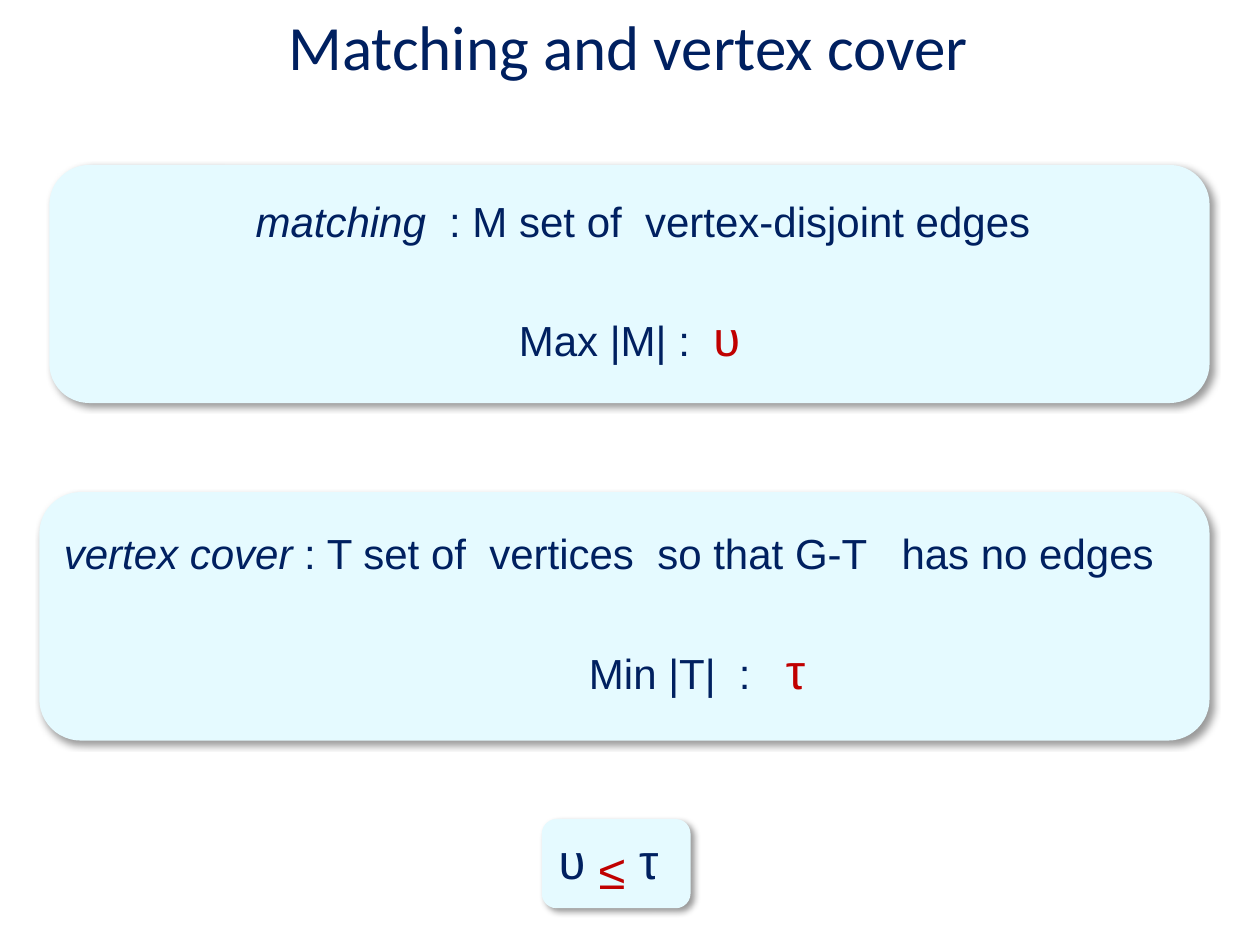
from lxml.etree import SubElement
from pptx import Presentation
from pptx.dml.color import RGBColor
from pptx.enum.shapes import MSO_SHAPE as Shape
from pptx.enum.text import MSO_ANCHOR as Anchor, PP_ALIGN as Align
from pptx.oxml.ns import qn
from pptx.util import Pt

NAVY = "002060"
RED = "C00000"
PALE_BLUE = "E5FAFF"
BLACK = "000000"


def color(hex_value):
    """Return the colour for a hex string."""
    return RGBColor.from_string(hex_value)


def add_shadow(shape):
    """Give a shape a soft shadow towards the lower right."""
    shape.shadow.inherit = False
    effects = shape._element.spPr.find(qn("a:effectLst"))
    shadow = SubElement(effects, qn("a:outerShdw"), blurRad=str(Pt(4)), dist=str(Pt(3)),
                        dir="2700000", algn="tl", rotWithShape="0")
    tint = SubElement(shadow, qn("a:srgbClr"), val=BLACK)
    SubElement(tint, qn("a:alpha"), val="40000")


def add_panel(slide, left, top, width, height):
    """Add a pale rounded panel and return its text frame."""
    panel = slide.shapes.add_shape(Shape.ROUNDED_RECTANGLE, Pt(left), Pt(top), Pt(width), Pt(height))
    panel.fill.solid()
    panel.fill.fore_color.rgb = color(PALE_BLUE)
    panel.line.fill.background()
    add_shadow(panel)
    panel.text_frame.vertical_anchor = Anchor.MIDDLE
    panel.text_frame.word_wrap = True
    return panel.text_frame


def add_text_box(slide, left, top, width, height, anchor=Anchor.TOP):
    """Add a wrapping text box and return its text frame."""
    frame = slide.shapes.add_textbox(Pt(left), Pt(top), Pt(width), Pt(height)).text_frame
    frame.word_wrap = True
    frame.vertical_anchor = anchor
    return frame


def write_run(paragraph, text, size=24, hex_value=NAVY, italic=False, name="Arial"):
    """Append one run of styled text."""
    run = paragraph.add_run()
    run.text = text
    run.font.size = Pt(size)
    run.font.name = name
    run.font.italic = italic
    run.font.color.rgb = color(hex_value)


def format_paragraph(paragraph, align=Align.LEFT, before=5, indent=0):
    """Set alignment, tight line spacing, space before and left margin."""
    paragraph.alignment = align
    paragraph.line_spacing = 0.9
    paragraph.space_before = Pt(before)
    paragraph._p.get_or_add_pPr().set("marL", str(Pt(indent)))


def add_tab_stop(paragraph, position):
    """Add a left tab stop to a paragraph."""
    tabs = SubElement(paragraph._p.get_or_add_pPr(), qn("a:tabLst"))
    SubElement(tabs, qn("a:tab"), pos=str(Pt(position)), algn="l")


def write_definition(frame, term, meaning, measure, symbol, align, indent, measure_indent):
    """Write a term with its meaning, and below it the measure with its symbol."""
    definition = frame.paragraphs[0]
    format_paragraph(definition, align, indent=indent)
    write_run(definition, term, italic=True)
    write_run(definition, meaning)
    optimum = frame.add_paragraph()
    format_paragraph(optimum, Align.CENTER, before=39, indent=measure_indent)
    write_run(optimum, measure)
    write_run(optimum, symbol, 28, RED)


def add_inequality(slide):
    """Add the small panel that compares the two numbers."""
    numbers = add_panel(slide, 309.6, 468, 85, 51).paragraphs[0]
    format_paragraph(numbers)
    add_tab_stop(numbers, 46)
    write_run(numbers, "υ\tτ", 28)
    relation = add_text_box(slide, 327, 476.6, 51, 41).paragraphs[0]
    relation._p.get_or_add_pPr().set("marL", str(Pt(8)))
    write_run(relation, "≤", 28, RED, italic=True)


def main():
    """Build the slide and save it."""
    presentation = Presentation()
    presentation.slide_width, presentation.slide_height = Pt(720), Pt(540)
    slide = presentation.slides.add_slide(presentation.slide_layouts[6])

    write_definition(add_panel(slide, 28.2, 94.3, 663, 136), "matching",
                     "  : M set of  vertex-disjoint edges", "Max |M| :  ", "υ",
                     Align.CENTER, 15.5, 0)
    write_definition(add_panel(slide, 22.5, 281.2, 668.7, 142), "vertex cover",
                     " : T set of  vertices  so that G-T   has no edges", "Min |T|  :   ", "τ",
                     Align.LEFT, 0, 83)
    add_inequality(slide)

    title = add_text_box(slide, -19.4, -10.8, 756.7, 73.4, Anchor.MIDDLE).paragraphs[0]
    title.alignment = Align.CENTER
    write_run(title, "Matching and vertex cover", 36, name="Calibri")

    presentation.save("out.pptx")


if __name__ == "__main__":
    main()
